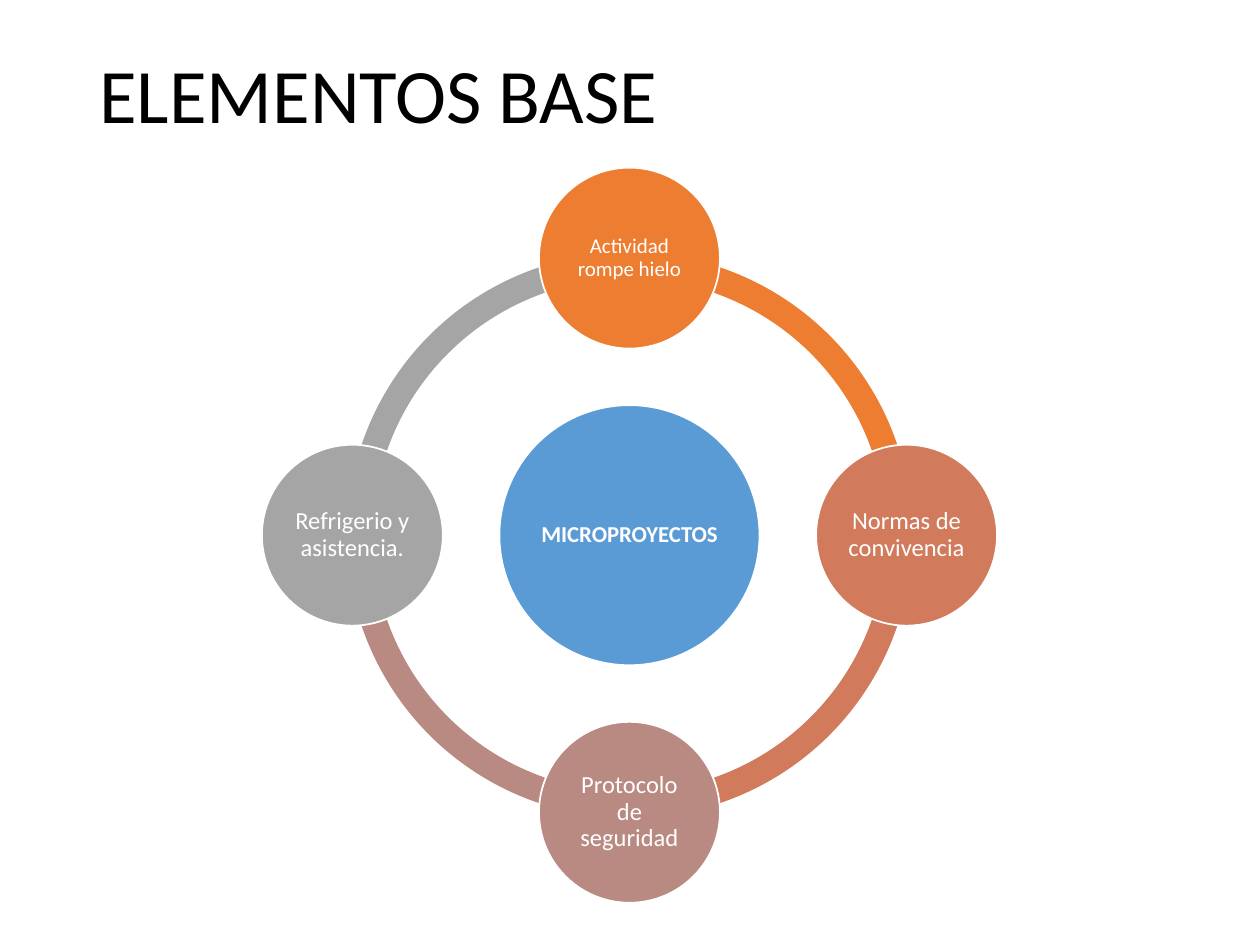
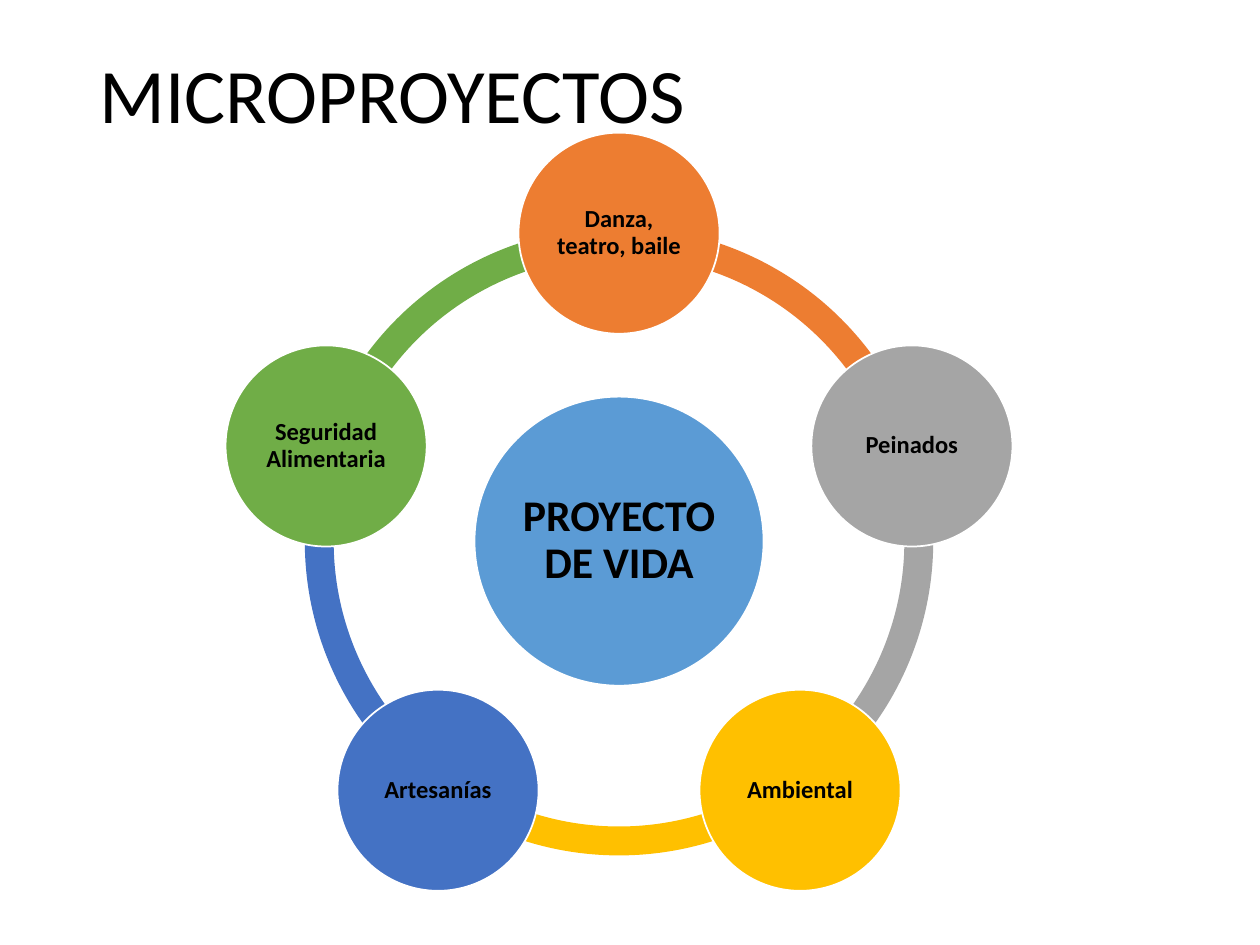
"""Builds two slides that each show a ring of themes around a central hub."""
from dataclasses import dataclass
from math import cos, radians, sin

from pptx import Presentation
from pptx import util as u
from pptx.dml.color import RGBColor
from pptx.enum import shapes, text


@dataclass(frozen=True)
class Theme:
    """Colours, type sizes and ring proportions shared by the slides."""
    font: str = "Calibri"
    white: str = "FFFFFF"
    black: str = "000000"
    blue: str = "5B9BD5"
    orange: str = "ED7D31"
    terracotta: str = "D17B5C"
    rose: str = "B98A82"
    gray: str = "A5A5A5"
    gold: str = "FFC000"
    navy: str = "4472C4"
    green: str = "70AD47"
    title_size: float = 44
    label_size: float = 14
    small_label_size: float = 12
    hub_size: float = 13
    large_hub_size: float = 25
    hub_ratio: float = 0.46
    node_ratio: float = 0.32
    orbit_ratio: float = 0.49
    band_ratio: float = 0.05


THEME = Theme()


def write_text(frame, content, *, size, color, bold=False,
               align=text.PP_ALIGN.CENTER, anchor=text.MSO_ANCHOR.MIDDLE, inset=0.05):
    """Write one formatted paragraph into a text frame; inset is in cm."""
    frame.word_wrap = True
    frame.auto_size = text.MSO_AUTO_SIZE.NONE
    frame.vertical_anchor = anchor
    frame.margin_left = frame.margin_right = u.Cm(inset)
    frame.margin_top = frame.margin_bottom = u.Cm(min(inset, 0.13))
    paragraph = frame.paragraphs[0]
    paragraph.text = content
    paragraph.alignment = align
    paragraph.line_spacing = 0.9
    paragraph.font.name = THEME.font
    paragraph.font.size = u.Pt(size)
    paragraph.font.bold = bold
    paragraph.font.color.rgb = RGBColor.from_string(color)


def add_titled_slide(presentation, title):
    """Add a title-only slide with the shared title style."""
    slide = presentation.slides.add_slide(presentation.slide_layouts[5])
    shape = slide.shapes.title
    shape.left, shape.top = u.Cm(1.75), u.Cm(1.01)
    shape.width, shape.height = u.Cm(21.9), u.Cm(3.68)
    write_text(shape.text_frame, title, size=THEME.title_size, color=THEME.black,
               align=text.PP_ALIGN.LEFT, anchor=text.MSO_ANCHOR.TOP, inset=0.25)
    return slide


def add_round_shape(slide, kind, center, diameter, fill):
    """Add a filled shape in a square box centred on a point, in cm."""
    x, y = center
    shape = slide.shapes.add_shape(kind, u.Cm(x - diameter / 2), u.Cm(y - diameter / 2),
                                   u.Cm(diameter), u.Cm(diameter))
    shape.shadow.inherit = False
    shape.fill.solid()
    shape.fill.fore_color.rgb = RGBColor.from_string(fill)
    shape.line.fill.background()
    return shape


def add_arc(slide, center, diameter, start, end, fill):
    """Add a ring segment that runs clockwise between two angles in degrees."""
    shape = add_round_shape(slide, shapes.MSO_SHAPE.BLOCK_ARC, center, diameter, fill)
    shape.adjustments[0] = start % 360 * 0.6
    shape.adjustments[1] = end % 360 * 0.6
    shape.adjustments[2] = THEME.band_ratio - 0.004


def add_disc(slide, center, diameter, fill, label, **text_format):
    """Add a white-edged circle with a centred label."""
    shape = add_round_shape(slide, shapes.MSO_SHAPE.OVAL, center, diameter, fill)
    shape.line.color.rgb = RGBColor.from_string(THEME.white)
    shape.line.width = u.Pt(1)
    write_text(shape.text_frame, label, **text_format)


def add_cycle(slide, center, diameter, hub, hub_size, nodes, *, color, bold):
    """Add a hub, its ring and the evenly spaced nodes, clockwise from the top."""
    step = 360 / len(nodes)
    angles = [270 + index * step for index in range(len(nodes))]
    for angle, (label, fill, size) in zip(angles, nodes):
        add_arc(slide, center, diameter, angle, angle + step, fill)
    add_disc(slide, center, diameter * THEME.hub_ratio, THEME.blue, hub,
             size=hub_size, color=color, bold=True)
    orbit = diameter * THEME.orbit_ratio
    for angle, (label, fill, size) in zip(angles, nodes):
        node_center = (center[0] + orbit * cos(radians(angle)),
                       center[1] + orbit * sin(radians(angle)))
        add_disc(slide, node_center, diameter * THEME.node_ratio, fill, label,
                 size=size, color=color, bold=bold)


def main():
    """Build both slides and save the presentation."""
    presentation = Presentation()
    presentation.slide_width, presentation.slide_height = u.Cm(25.4), u.Cm(19.05)

    elements = [
        ("Actividad rompe hielo", THEME.orange, THEME.small_label_size),
        ("Normas de convivencia", THEME.terracotta, THEME.label_size),
        ("Protocolo de seguridad", THEME.rose, THEME.label_size),
        ("Refrigerio y asistencia.", THEME.gray, THEME.label_size),
    ]
    slide = add_titled_slide(presentation, "ELEMENTOS BASE")
    add_cycle(slide, (12.69, 10.79), 11.4, "MICROPROYECTOS", THEME.hub_size,
              elements, color=THEME.white, bold=False)

    projects = [
        ("Danza, teatro, baile", THEME.orange, THEME.label_size),
        ("Peinados", THEME.gray, THEME.label_size),
        ("Ambiental", THEME.gold, THEME.label_size),
        ("Artesanías", THEME.navy, THEME.label_size),
        ("Seguridad Alimentaria", THEME.green, THEME.label_size),
    ]
    slide = add_titled_slide(presentation, "MICROPROYECTOS")
    add_cycle(slide, (12.48, 10.91), 12.67, "PROYECTO DE VIDA", THEME.large_hub_size,
              projects, color=THEME.black, bold=True)

    presentation.save("out.pptx")


if __name__ == "__main__":
    main()
